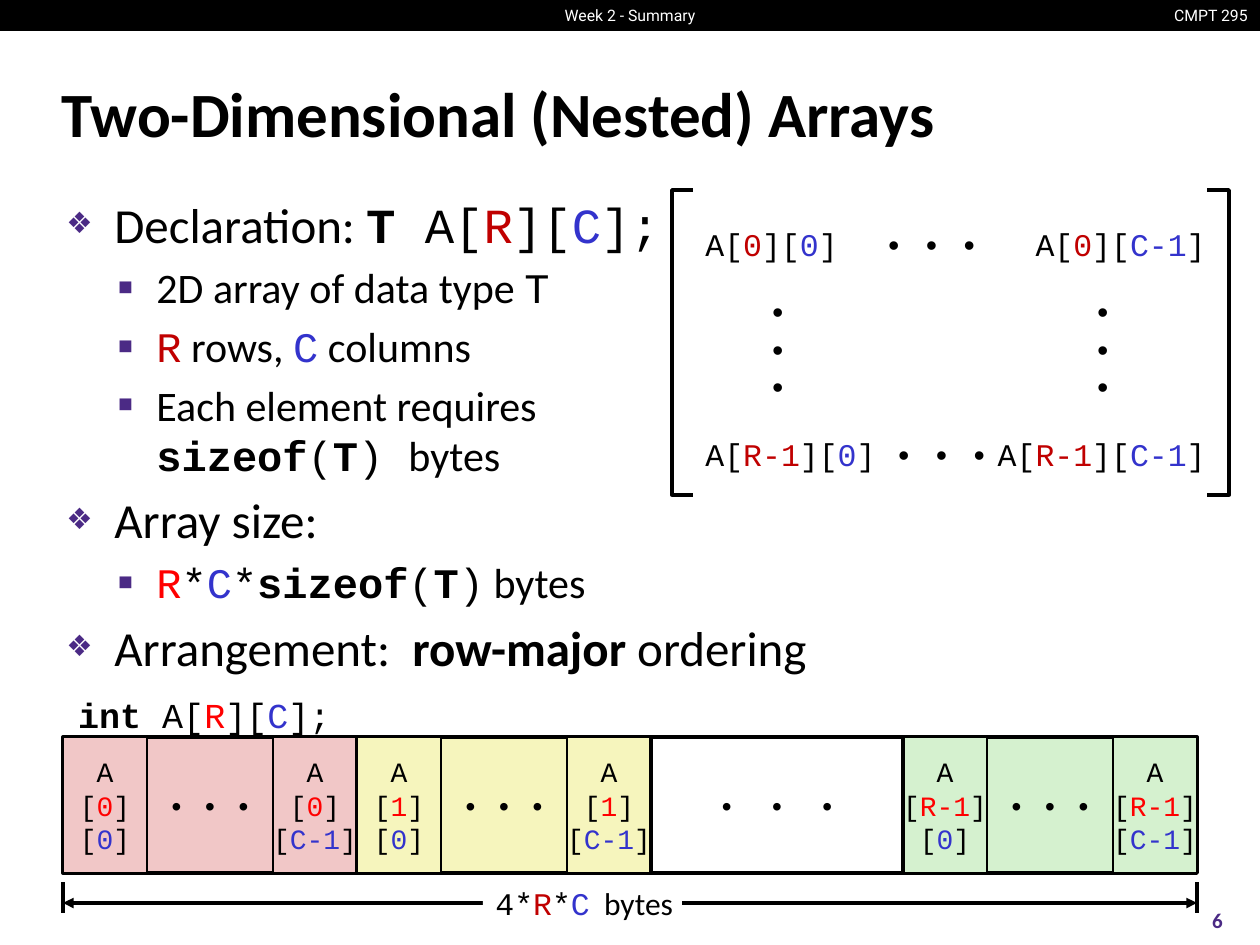
import pptx
import pptx.util
import pptx.dml.color
import pptx.enum.shapes
import pptx.enum.text
import pptx.oxml
import pptx.oxml.ns
from lxml import etree

EMU_PER_PX = 914400 / 126
BLACK, WHITE, PURPLE = "000000", "FFFFFF", "4B2A85"
SANS, MONO = "Calibri", "Courier New"
ALIGN = {"l": pptx.enum.text.PP_ALIGN.LEFT, "c": pptx.enum.text.PP_ALIGN.CENTER,
         "r": pptx.enum.text.PP_ALIGN.RIGHT}
TOP, MIDDLE = pptx.enum.text.MSO_ANCHOR.TOP, pptx.enum.text.MSO_ANCHOR.MIDDLE
RECT = pptx.enum.shapes.MSO_SHAPE.RECTANGLE
# One letter per run style: m mono, b bold, d dark red, r red, c blue
STYLES = {"m": {"name": MONO}, "b": {"bold": True}, "d": {"color": "C00000"},
          "r": {"color": "FF0000"}, "c": {"color": "3333CC"}}
# Per level: text size, left indent, hanging indent, bullet, bullet size
LEVELS = [(28, 48, 48, "❖", 60), (24, 90, 39, "▪", 110)]
DOTS = [("• • •", "m")]


def px(n):
    return round(n * EMU_PER_PX)


def rgb(value):
    return pptx.dml.color.RGBColor.from_string(value)


def add_runs(p, runs, **base):
    for text, letters in runs:
        if text == "\n":
            p.add_line_break()
            continue
        r = p.add_run()
        r.text = text
        fmt = {"name": SANS, "bold": False, "color": BLACK, **base}
        for letter in letters:
            fmt.update(STYLES[letter])
        r.font.color.rgb = rgb(fmt.pop("color"))
        r.font.size = pptx.util.Pt(fmt.pop("size"))
        for name, value in fmt.items():
            setattr(r.font, name, value)


def fill_text(sp, paragraphs, align="l", anchor=MIDDLE, wrap=False, **base):
    tf = sp.text_frame
    for name, value in {"word_wrap": wrap, "vertical_anchor": anchor}.items():
        setattr(tf, name, value)
    for i, runs in enumerate(paragraphs):
        p = tf.add_paragraph() if i else tf.paragraphs[0]
        p.alignment = ALIGN[align]
        add_runs(p, runs, **base)


def add_text(s, box, paragraphs, **options):
    sp = s.shapes.add_textbox(*map(px, box))
    fill_text(sp, paragraphs, **options)


def add_box(s, box, fill, paragraphs=(), line=None, **options):
    sp = s.shapes.add_shape(RECT, *map(px, box))
    sp.shadow.inherit = False
    sp.fill.solid()
    sp.fill.fore_color.rgb = rgb(fill)
    if line:
        sp.line.color.rgb = rgb(BLACK)
        sp.line.width = pptx.util.Pt(line)
    else:
        sp.line.fill.background()
    fill_text(sp, paragraphs, **options)


def add_line(s, x1, y1, x2, y2, arrows=False):
    cx = s.shapes.add_connector(pptx.enum.shapes.MSO_CONNECTOR.STRAIGHT,
                                *map(px, (x1, y1, x2, y2)))
    cx.line.color.rgb = rgb(BLACK)
    cx.line.width = pptx.util.Pt(2)
    if arrows:
        ln = cx.line._get_or_add_ln()
        for end in ("a:headEnd", "a:tailEnd"):
            etree.SubElement(ln, pptx.oxml.ns.qn(end), type="triangle")
    etree.SubElement(cx._element.spPr, pptx.oxml.ns.qn("a:effectLst"))


def add_bracket(s, tip, spine, top, bottom):
    fb = s.shapes.build_freeform(px(tip), px(top), scale=1.0)
    corners = [(spine, top), (spine, bottom), (tip, bottom)]
    fb.add_line_segments([(px(x), px(y)) for x, y in corners], close=False)
    sp = fb.convert_to_shape()
    sp.shadow.inherit = False
    sp.fill.background()
    sp.line.color.rgb = rgb(BLACK)
    sp.line.width = pptx.util.Pt(2)


def set_bullet(p, left, hanging, char, percent):
    pPr = p._p.get_or_add_pPr()
    pPr.set("marL", str(px(left)))
    pPr.set("indent", str(-px(hanging)))
    ns = pptx.oxml.ns.nsdecls("a")
    for xml in (f'<a:buClr {ns}><a:srgbClr val="{PURPLE}"/></a:buClr>',
                f'<a:buSzPct {ns} val="{percent * 1000}"/>',
                f'<a:buFont {ns} typeface="{SANS}"/>',
                f'<a:buChar {ns} char="{char}"/>'):
        pPr.append(pptx.oxml.parse_xml(xml))


def add_outline(s, box, items):
    tf = s.shapes.add_textbox(*map(px, box)).text_frame
    tf.word_wrap = True
    for i, (level, runs) in enumerate(items):
        size, *bullet = LEVELS[level]
        p = tf.add_paragraph() if i else tf.paragraphs[0]
        p.level = level
        p.space_before = pptx.util.Pt(size * 0.2)
        set_bullet(p, *bullet)
        add_runs(p, runs, size=size)


def element(row, col, red="d"):
    return [("A[", "m"), (row, "m" + red), ("][", "m"), (col, "mc"), ("]", "m")]


def stacked_element(row, col):
    return [[("A", "m")]] + [[("[", "m"), (index, "m" + style), ("]", "m")]
                             for index, style in ((row, "r"), (col, "c"))]


def add_matrix(s):
    for y, row, dots_x in ((212, "0", 872), (422, "R-1", 882)):
        # Dots go behind: the wide elements reach past their own boxes
        add_box(s, (dots_x, y, 126, 63), WHITE, [DOTS], size=18)
        for x, col, align in ((693, "0", "l"), (1050, "C-1", "r")):
            add_box(s, (x, y, 168, 63), WHITE, [element(row, col)], align=align, size=18)
    for x in (756, 1081):
        add_box(s, (x, 296, 63, 105), WHITE, [[("•", "m")]] * 3, size=18)
    add_bracket(s, 693, 672, 190, 495)
    add_bracket(s, 1207, 1229, 190, 495)


def add_memory_row(s, x, fill, row):
    top, height, width, cell = 737, 136, 294, 84
    style = {"align": "c", "size": 16}
    add_box(s, (x, top, width, height), fill, [DOTS], line=2.25, **style)
    for left, col in ((x, "0"), (x + width - cell, "C-1")):
        add_box(s, (left, top, cell, height), fill, stacked_element(row, col),
                line=1, **style)


def main():
    prs = pptx.Presentation()
    prs.slide_width, prs.slide_height = px(1260), px(945)
    s = prs.slides.add_slide(prs.slide_layouts[6])

    # Header bar
    header = {"anchor": TOP, "size": 9, "name": "Roboto", "color": WHITE}
    add_box(s, (0, 0, 1260, 31), BLACK)
    add_text(s, (1158, 0, 102, 31), [[("CMPT 295", "")]], align="r", **header)
    add_text(s, (541, 0, 178, 31), [[("Week 2 - Summary", "")]], align="c", **header)

    # Title, outline and slide number
    add_text(s, (49, 60, 1158, 105), [[("Two-Dimensional (Nested) Arrays", "b")]],
             wrap=True, size=36)
    sizeof = [("sizeof", "mb"), ("(", "m"), ("T", "mb")]
    add_outline(s, (54, 188, 1153, 685), [
        (0, [("Declaration: ", ""), ("T", "mb"), (" A[", "m"), ("R", "md"),
             ("][", "m"), ("C", "mc"), ("];", "m")]),
        (1, [("2D array of data type ", ""), ("T", "m")]),
        (1, [("R", "md"), (" rows, ", ""), ("C", "mc"), (" columns", "")]),
        (1, [("Each element requires ", ""), ("\n", ""), *sizeof, (") ", "m"),
             ("bytes", "")]),
        (0, [("Array size:", "")]),
        (1, [("R", "mr"), ("*", "m"), ("C", "mc"), ("*", "m"), *sizeof, (")", "m"),
             (" bytes", "")]),
        (0, [("Arrangement:  ", ""), ("row-major", "b"), (" ordering", "")]),
    ])
    add_text(s, (1175, 895, 85, 50), [[("6", "b")]], align="c", size=12, color=PURPLE)

    # Memory layout
    declaration = [("int", "mb"), (" ", "m"), *element("R", "C", "r"), (";", "m")]
    add_text(s, (63, 687, 280, 55), [declaration], align="r", anchor=TOP, size=20)
    for x, fill, row in ((63, "F1C7C7", "0"), (357, "F6F5BD", "1"), (903, "D5F1CF", "R-1")):
        add_memory_row(s, x, fill, row)
    add_box(s, (651, 737, 252, 136), WHITE, [[("•  •  •", "m")]], line=2,
            align="c", size=16)

    # Total size in bytes
    add_line(s, 63, 903, 1197, 903, arrows=True)
    for x in (63, 1197):
        add_line(s, x, 882, x, 913)
    add_box(s, (483, 876, 199, 53), WHITE,
            [[("4*", "m"), ("R", "md"), ("*", "m"), ("C", "mc"), ("  bytes", "")]], size=18)

    # Matrix view
    add_matrix(s)
    prs.save("out.pptx")


if __name__ == "__main__":
    main()
